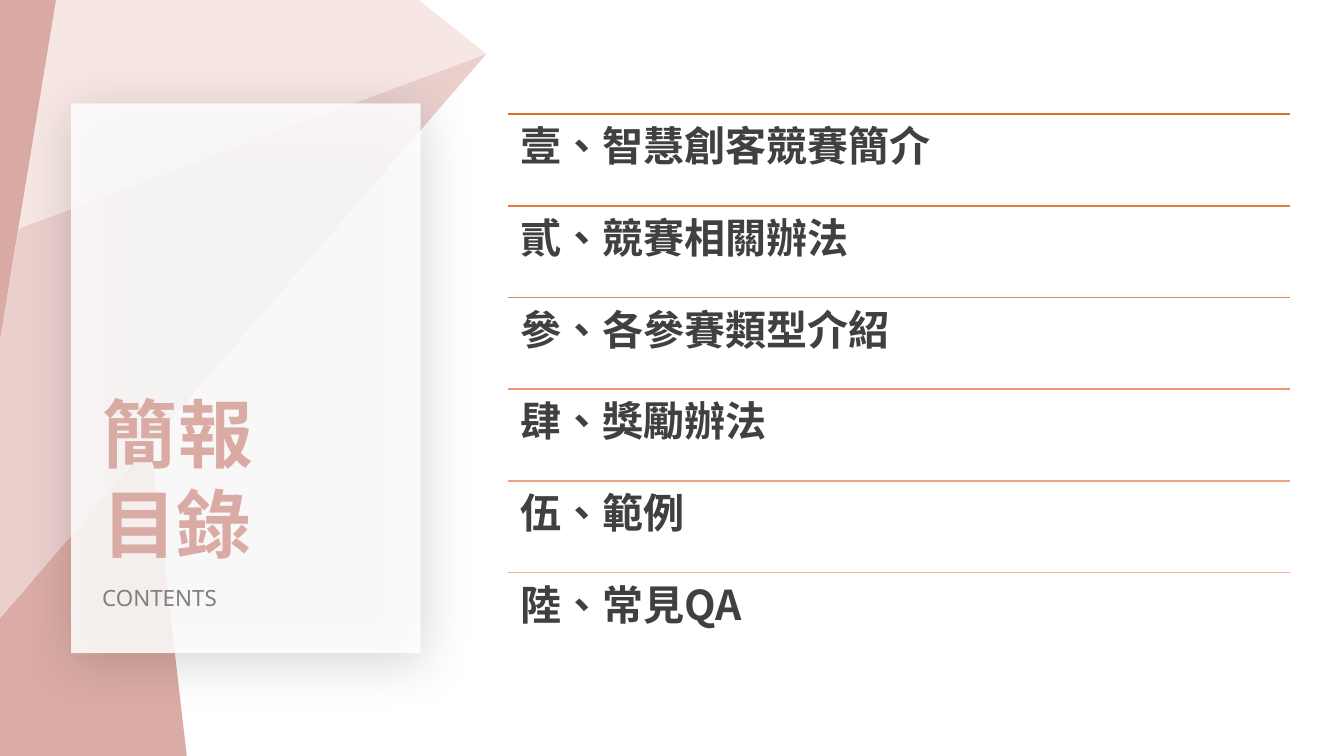
from lxml import etree
from pptx import Presentation
from pptx.dml.color import RGBColor
from pptx.enum.lang import MSO_LANGUAGE_ID
from pptx.enum.shapes import MSO_CONNECTOR, MSO_SHAPE
from pptx.enum.text import MSO_AUTO_SIZE, PP_ALIGN
from pptx.oxml.ns import qn
from pptx.util import Inches, Pt

STRAIGHT = MSO_CONNECTOR.STRAIGHT
RECTANGLE = MSO_SHAPE.RECTANGLE
GROW = MSO_AUTO_SIZE.SHAPE_TO_FIT_TEXT
FIXED = MSO_AUTO_SIZE.NONE
JUSTIFY = PP_ALIGN.JUSTIFY
LEFT = PP_ALIGN.LEFT
CHINESE = MSO_LANGUAGE_ID.TRADITIONAL_CHINESE


def rgb(value):
    return RGBColor.from_string(value)


def add_text(shapes, text, area, inset, size, face, color, bold, align, fit):
    box = shapes.add_textbox(*[Inches(length) for length in area])
    frame = box.text_frame
    frame.word_wrap = True
    frame.auto_size = fit
    frame.margin_left = frame.margin_right = Inches(inset[0])
    frame.margin_top = frame.margin_bottom = Inches(inset[1])
    para = frame.paragraphs[0]
    para.alignment = align
    para.font.size = Pt(size)
    para.font.bold = bold
    para.font.name = face
    para.font.color.rgb = rgb(color)
    latin = para.font._element.find(qn("a:latin"))
    east_asian = etree.Element(qn("a:ea"), typeface=face)
    latin.addnext(east_asian)
    span = para.add_run()
    span.text = text
    span.font.language_id = CHINESE
    return para


deck = Presentation()
deck.slide_width = Inches(10)
deck.slide_height = Inches(10) * 9 // 16
page = deck.slides.add_slide(deck.slide_layouts[6])

facets = [
    ("DBACA5", [(1.12, 3.3), (1.39, 5.63), (0, 5.63), (0, 4.6)]),
    ("EACFCD", [(3.62, 0.4), (0.14, 1.7), (0, 2.53), (0, 4.6)]),
    ("F6E7E4", [(3.62, 0.4), (3.09, -0.02), (0.42, -0.02), (0.14, 1.7)]),
    ("D9ABA4", [(0.42, -0.02), (0, -0.02), (0, 2.53)]),
]
backdrop = page.shapes.add_group_shape()
for color, corners in facets:
    points = [(Inches(x), Inches(y)) for x, y in corners]
    builder = backdrop.shapes.build_freeform(*points[0])
    builder.add_line_segments(points[1:], close=True)
    facet = builder.convert_to_shape()
    facet.shadow.inherit = False
    facet.fill.solid()
    facet.fill.fore_color.rgb = rgb(color)
    facet.line.fill.background()

card = page.shapes.add_shape(RECTANGLE, Inches(0.53), Inches(0.77), Inches(2.6), Inches(4.09))
card.shadow.inherit = False
card.fill.solid()
card.fill.fore_color.rgb = rgb("FFFFFF")
card.line.fill.background()
card_color = card._element.spPr.find(qn("a:solidFill")).find(qn("a:srgbClr"))
etree.SubElement(card_color, qn("a:alpha"), val="85000")
effects = card._element.spPr.find(qn("a:effectLst"))
shadow = etree.SubElement(
    effects, qn("a:outerShdw"), blurRad=str(Pt(29)), dist=str(Pt(5)),
    dir=str(77 * 60000), algn="t", rotWithShape="0",
)
shadow_color = etree.SubElement(shadow, qn("a:srgbClr"), val="000000")
etree.SubElement(shadow_color, qn("a:alpha"), val="20000")

add_text(page.shapes, "簡報目錄", (0.76, 2.84, 1.12, 1.45), (0, 0.05),
         40, "Noto Sans", "D9ABA4", True, JUSTIFY, GROW)
add_text(page.shapes, "CONTENTS", (0.76, 4.3, 1.19, 0.3), (0, 0.05),
         12, "Noto Sans", "808080", False, JUSTIFY, GROW)

chapters = [
    ("壹、智慧創客競賽簡介", "D7712C"),
    ("貳、競賽相關辦法", "DE7C41"),
    ("參、各參賽類型介紹", "E48857"),
    ("肆、獎勵辦法", "E9956D"),
    ("伍、範例", "EEA384"),
    ("陸、常見QA", "F3B39B"),
]
left, top, bottom, width = 3.78, 0.85, 4.26, 5.82
row_height = (bottom - top) / (len(chapters) - 1)
contents = page.shapes.add_group_shape()
for index, (chapter, color) in enumerate(chapters):
    y = top + index * row_height
    rule = contents.shapes.add_connector(
        STRAIGHT, Inches(left), Inches(y), Inches(left + width), Inches(y))
    rule.line.color.rgb = rgb(color)
    rule.line.width = Pt(1)
    etree.SubElement(rule._element.spPr, qn("a:effectLst"))
    para = add_text(contents.shapes, chapter, (left, y, width, row_height), (0.09, 0.09),
                    22, "Noto Sans CJK SC", "404040", True, LEFT, FIXED)
    para.line_spacing = 0.9

deck.save("out.pptx")
